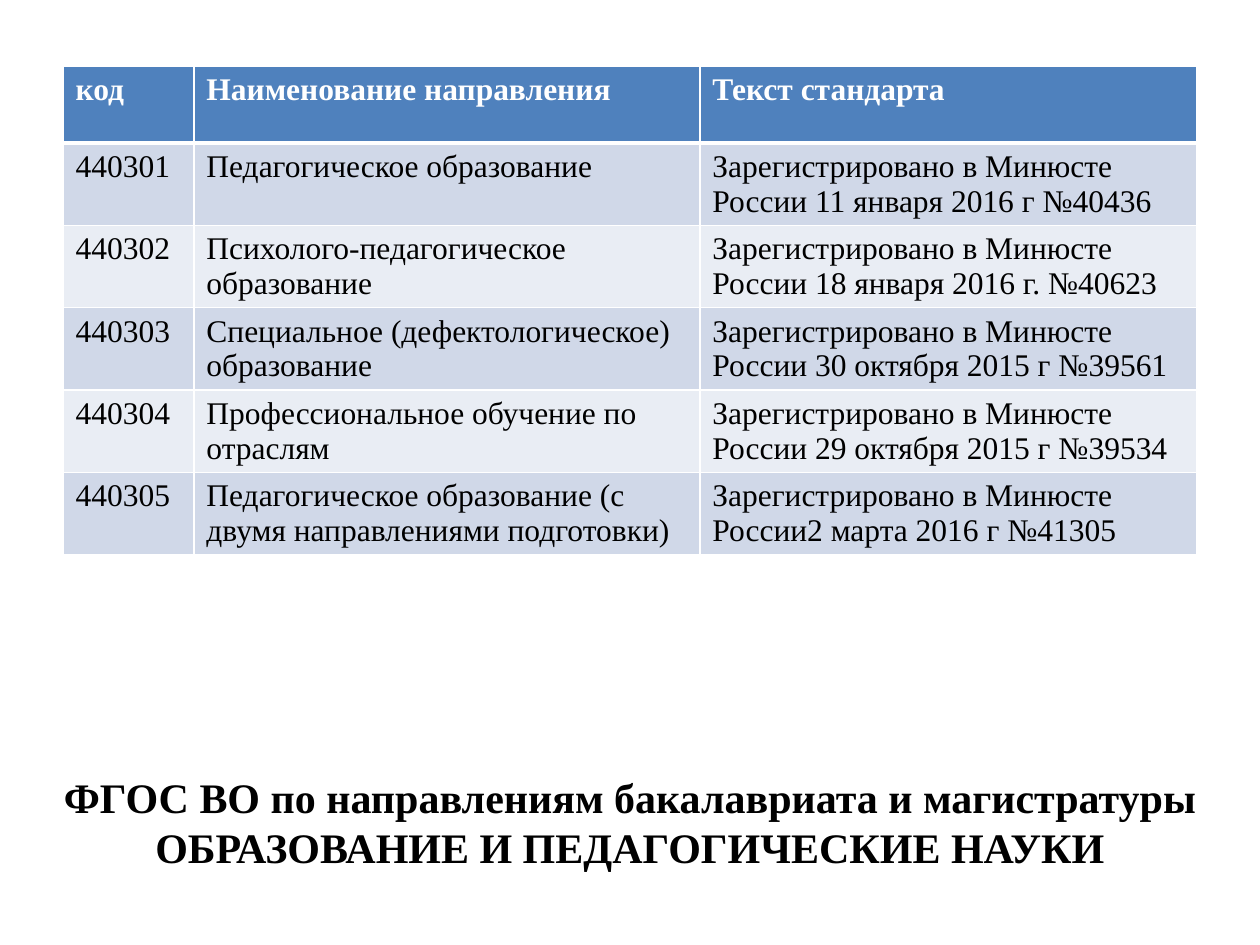
from dataclasses import dataclass

from lxml.etree import SubElement
from pptx import Presentation
from pptx.dml.color import RGBColor
from pptx.enum.text import PP_ALIGN
from pptx.oxml.ns import qn
from pptx.util import Cm, Pt


@dataclass(frozen=True)
class Theme:
    font: str = "Times New Roman"
    table_size: int = 18
    caption_size: int = 24
    text: str = "000000"
    header_text: str = "FFFFFF"
    header_fill: str = "4F81BD"
    bands: tuple = ("D0D8E8", "E9EDF4")
    border: str = "FFFFFF"
    border_width: int = 1
    header_rule_width: int = 3


THEME = Theme()

HEADINGS = ("код", "Наименование направления", "Текст стандарта")
REGISTERED = "Зарегистрировано в Минюсте России"
STANDARDS = (
    ("440301", "Педагогическое образование", f"{REGISTERED} 11 января 2016 г №40436"),
    ("440302", "Психолого-педагогическое образование", f"{REGISTERED} 18 января 2016 г. №40623"),
    ("440303", "Специальное (дефектологическое) образование", f"{REGISTERED} 30 октября 2015 г №39561"),
    ("440304", "Профессиональное обучение по отраслям", f"{REGISTERED} 29 октября 2015 г №39534"),
    ("440305", "Педагогическое образование (с двумя направлениями подготовки)",
     f"{REGISTERED}2 марта 2016 г №41305"),
)
COLUMN_SHARES = (1.04, 4.02, 3.95)
CAPTION = (
    "ФГОС ВО по направлениям бакалавриата и магистратуры",
    "ОБРАЗОВАНИЕ И ПЕДАГОГИЧЕСКИЕ НАУКИ",
)


def write(paragraph, text, size, color, bold):
    run = paragraph.add_run()
    run.text = text
    font_format = {"name": THEME.font, "size": Pt(size), "bold": bold}
    for attribute, value in font_format.items():
        setattr(run.font, attribute, value)
    run.font.color.rgb = RGBColor.from_string(color)


def add_borders(cell, widths):
    """Draw cell borders; widths maps each side (L, R, T, B) to points."""
    properties = cell._tc.get_or_add_tcPr()
    for side, width in widths.items():
        line = SubElement(properties, qn(f"a:ln{side}"), w=str(Pt(width)))
        fill = SubElement(line, qn("a:solidFill"))
        SubElement(fill, qn("a:srgbClr"), val=THEME.border)


def add_standards_table(slide, left, top, width, height):
    rows = (HEADINGS, *STANDARDS)
    table = slide.shapes.add_table(
        len(rows), len(HEADINGS), left, top, width, height).table
    for column, share in zip(table.columns, COLUMN_SHARES):
        column.width = int(width * share / sum(COLUMN_SHARES))

    for row_index, row in enumerate(rows):
        is_header = row_index == 0
        fill = THEME.header_fill if is_header else THEME.bands[(row_index - 1) % 2]
        color = THEME.header_text if is_header else THEME.text
        widths = dict.fromkeys("LRTB", THEME.border_width)
        if row_index < 2:
            widths["B" if is_header else "T"] = THEME.header_rule_width
        for column_index, text in enumerate(row):
            cell = table.cell(row_index, column_index)
            write(cell.text_frame.paragraphs[0], text,
                  THEME.table_size, color, is_header)
            add_borders(cell, widths)
            cell.fill.solid()
            cell.fill.fore_color.rgb = RGBColor.from_string(fill)


def add_caption(slide, left, top, width, height):
    frame = slide.shapes.add_textbox(left, top, width, height).text_frame
    frame.word_wrap = True
    for index, line in enumerate(CAPTION):
        paragraph = frame.add_paragraph() if index else frame.paragraphs[0]
        paragraph.alignment = PP_ALIGN.CENTER
        write(paragraph, line, THEME.caption_size, THEME.text, True)


def main():
    presentation = Presentation()
    presentation.slide_width, presentation.slide_height = Cm(25.4), Cm(19.05)
    slide = presentation.slides.add_slide(presentation.slide_layouts[6])
    add_standards_table(slide, Cm(1.27), Cm(1.33), Cm(22.86), Cm(9.3))
    add_caption(slide, 0, Cm(15.42), presentation.slide_width, Cm(2.31))
    presentation.save("out.pptx")


if __name__ == "__main__":
    main()
